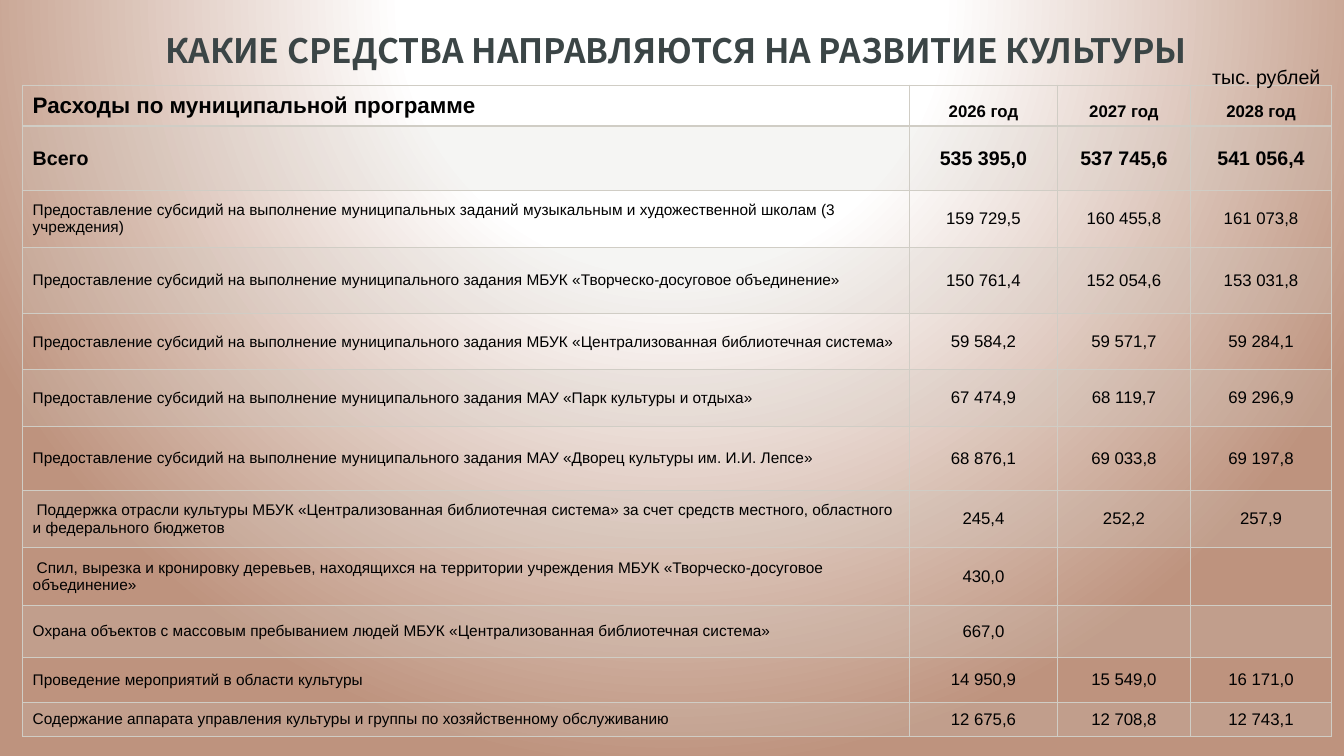
from lxml import etree
from pptx import Presentation
from pptx.dml.color import RGBColor
from pptx.enum.text import MSO_ANCHOR as Anchor, PP_ALIGN as Align
from pptx.oxml import parse_xml
from pptx.oxml.ns import nsdecls, qn
from pptx.util import Cm, Pt

BLACK = RGBColor(0x00, 0x00, 0x00)
SLATE = RGBColor(0x3B, 0x45, 0x46)
SAND = RGBColor(0xD0, 0xCD, 0xC5)
WHITE = RGBColor(0xFF, 0xFF, 0xFF)
CLAY = RGBColor(0xBE, 0x93, 0x7E)

BODY_FONT = "Arial"
TITLE_FONT = "Noto Sans CJK JP"
BAND_OPACITY = 20000
COLUMN_WIDTHS = [22.35, 3.73, 3.35, 3.56]
ROW_HEIGHTS = [1.03, 1.63, 1.42, 1.67, 1.42, 1.42, 1.63, 1.42, 1.47, 1.3, 1.14, 0.86]

SUBSIDY = "Предоставление субсидий на выполнение муниципального задания "
LIBRARY = "МБУК «Централизованная библиотечная система»"
LEISURE = "МБУК «Творческо-досуговое объединение»"
EXPENSES = [
    ("Расходы по муниципальной программе", "2026 год", "2027 год", "2028 год"),
    ("Всего", "535 395,0", "537 745,6", "541 056,4"),
    ("Предоставление субсидий на выполнение муниципальных заданий музыкальным "
     "и художественной школам (3 учреждения)", "159 729,5", "160 455,8", "161 073,8"),
    (SUBSIDY + LEISURE, "150 761,4", "152 054,6", "153 031,8"),
    (SUBSIDY + LIBRARY, "59 584,2", "59 571,7", "59 284,1"),
    (SUBSIDY + "МАУ «Парк культуры и отдыха»", "67 474,9", "68 119,7", "69 296,9"),
    (SUBSIDY + "МАУ «Дворец культуры им. И.И. Лепсе»", "68 876,1", "69 033,8", "69 197,8"),
    ("Поддержка отрасли культуры " + LIBRARY + " за счет средств местного, "
     "областного и федерального бюджетов", "245,4", "252,2", "257,9"),
    ("Спил, вырезка и кронировку деревьев, находящихся на территории учреждения "
     + LEISURE, "430,0", "", ""),
    ("Охрана объектов с массовым пребыванием людей " + LIBRARY, "667,0", "", ""),
    ("Проведение мероприятий в области культуры", "14 950,9", "15 549,0", "16 171,0"),
    ("Содержание аппарата управления культуры и группы по хозяйственному обслуживанию",
     "12 675,6", "12 708,8", "12 743,1"),
]


def add_run(paragraph, text, size, color=BLACK, bold=False, font_name=BODY_FONT):
    run = paragraph.add_run()
    run.text = text
    font = run.font
    font.size, font.bold, font.name = Pt(size), bold, font_name
    font.color.rgb = color
    if font_name == TITLE_FONT:
        for tag in ("a:ea", "a:cs"):
            etree.SubElement(run._r.rPr, qn(tag), typeface=font_name)


def set_background(slide):
    """Radial gradient centred above the slide."""
    stops = "".join(
        f'<a:gs pos="{position}"><a:srgbClr val="{color}"/></a:gs>'
        for position, color in [(0, WHITE), (35000, WHITE), (100000, CLAY)])
    background = parse_xml(
        f'<p:bg {nsdecls("p", "a")}><p:bgPr><a:gradFill rotWithShape="1">'
        f'<a:gsLst>{stops}</a:gsLst><a:path path="circle">'
        '<a:fillToRect l="50000" t="-80000" r="50000" b="180000"/></a:path>'
        '</a:gradFill><a:effectLst/></p:bgPr></p:bg>')
    slide.element.cSld.insert(0, background)


def set_borders(cell, row):
    """Thin lines all round, with a double-width rule under the header row."""
    widths = {"L": 1, "R": 1, "T": 2 if row == 1 else 1, "B": 2 if row == 0 else 1}
    properties = cell._tc.get_or_add_tcPr()
    for side, width in widths.items():
        properties.append(parse_xml(
            f'<a:ln{side} {nsdecls("a")} w="{Pt(width)}"><a:solidFill>'
            f'<a:srgbClr val="{SAND}"/></a:solidFill></a:ln{side}>'))


def set_band(cell, row):
    """Tint every second row with see-through sand."""
    if row % 2 == 0:
        cell.fill.background()
        return
    cell.fill.solid()
    cell.fill.fore_color.rgb = SAND
    color = cell._tc.tcPr.find(qn("a:solidFill")).find(qn("a:srgbClr"))
    etree.SubElement(color, qn("a:alpha"), val=str(BAND_OPACITY))


def fill_cell(cell, text, row, column):
    is_label = column == 0
    label_size, number_size = {0: (16, 12), 1: (14, 14)}.get(row, (11, 12))
    set_borders(cell, row)
    set_band(cell, row)
    cell.vertical_anchor = Anchor.BOTTOM if row == 0 and not is_label else Anchor.MIDDLE
    if row > 0 and not is_label:
        cell.margin_left = cell.margin_right = Cm(0.18)
        cell.margin_top = cell.margin_bottom = 0
    if text:
        paragraph = cell.text_frame.paragraphs[0]
        paragraph.alignment = Align.LEFT if is_label else Align.CENTER
        if text.startswith(("Поддержка", "Спил")):
            paragraph._p.get_or_add_pPr().set("indent", str(Cm(0.1)))
        add_run(paragraph, text, label_size if is_label else number_size, bold=row < 2)


def add_expense_table(slide, left, top):
    frame = slide.shapes.add_table(
        len(ROW_HEIGHTS), len(COLUMN_WIDTHS), Cm(left), Cm(top),
        Cm(sum(COLUMN_WIDTHS)), Cm(sum(ROW_HEIGHTS)))
    table = frame.table
    table.first_row = table.horz_banding = False
    for column, width in zip(table.columns, COLUMN_WIDTHS):
        column.width = Cm(width)
    for row, (height, texts) in enumerate(zip(ROW_HEIGHTS, EXPENSES)):
        table.rows[row].height = Cm(height)
        for column, text in enumerate(texts):
            fill_cell(table.cell(row, column), text, row, column)


def add_text(slide, left, top, width, height, text, alignment, wrap, **style):
    box = slide.shapes.add_textbox(Cm(left), Cm(top), Cm(width), Cm(height))
    box.text_frame.word_wrap = wrap
    paragraph = box.text_frame.paragraphs[0]
    paragraph.alignment = alignment
    add_run(paragraph, text, **style)


def build_culture_slide(presentation):
    slide = presentation.slides.add_slide(presentation.slide_layouts[6])
    set_background(slide)
    add_expense_table(slide, 0.57, 2.15)
    add_text(slide, 0.6, 0.64, 32.87, 1.27,
             "КАКИЕ СРЕДСТВА НАПРАВЛЯЮТСЯ НА РАЗВИТИЕ КУЛЬТУРЫ", Align.CENTER, True,
             size=24, color=SLATE, bold=True, font_name=TITLE_FONT)
    add_text(slide, 30.3, 1.52, 3.25, 0.86, "тыс. рублей", Align.LEFT, False, size=14)


def main():
    presentation = Presentation()
    presentation.slide_width, presentation.slide_height = Cm(33.87), Cm(19.05)
    build_culture_slide(presentation)
    presentation.save("out.pptx")


if __name__ == "__main__":
    main()
